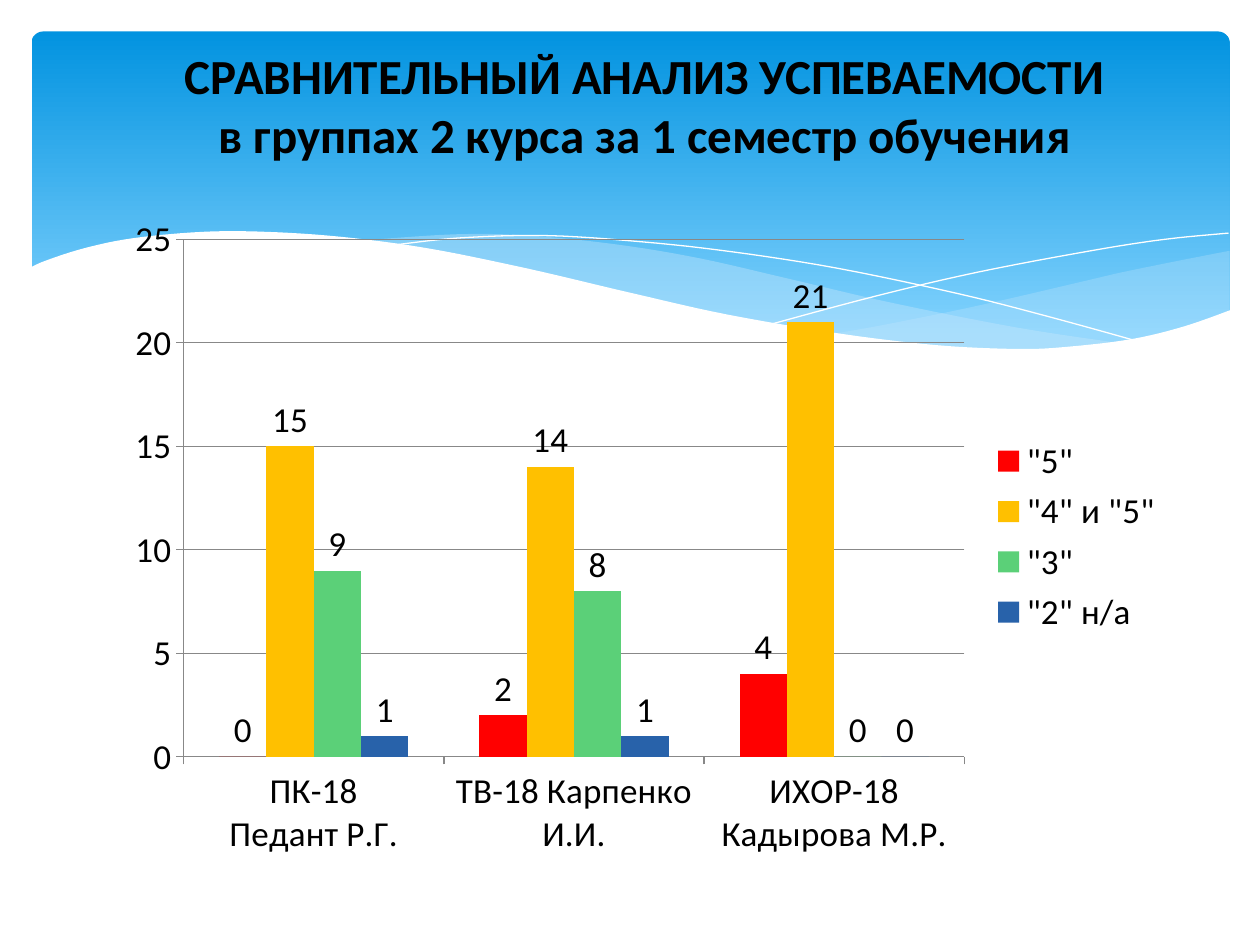
import pptx
import pptx.util
import pptx.chart.data
import pptx.dml.color
import pptx.enum.chart
import pptx.enum.shapes
import pptx.enum.text
import pptx.oxml
import pptx.oxml.ns

# The slide is a grid of 100 columns by 75 rows; boxes are left, top, width, height.
UNIT = pptx.util.Inches(0.1)
HEAD = (2.5, 2.5, 95.1, 27)
TITLE = (5.1, 3.6, 92.1, 13.7)
CHART = (9.1, 16.2, 84.3, 52.8)
PLOT = {"x": 0.065, "y": 0.053, "w": 0.735, "h": 0.778}
FONT = "Calibri"

LINES = ["СРАВНИТЕЛЬНЫЙ АНАЛИЗ УСПЕВАЕМОСТИ",
         "в группах 2 курса за 1 семестр обучения"]
GROUPS = ["ПК-18\nПедант Р.Г.", "ТВ-18 Карпенко И.И.", "ИХОР-18 Кадырова М.Р."]
MARKS = [('"5"', (0, 2, 4), "FF0000"),
         ('"4" и "5"', (15, 14, 21), "FFC000"),
         ('"3"', (9, 8, 0), "5BD078"),
         ('"2" н/а', (1, 1, 0), "2862AA")]

# Knots of the waves, in columns and rows from the corner of the header.
RIGHT_TOP = [(95.1, 17.4), (91, 18.2), (86.6, 19.1), (83.6, 19.8),
             (75.4, 21.7), (68.1, 23.2), (63.6, 24)]
RIGHT_LOW = [(63.6, 24), (69.3, 24.7), (74.4, 25.2), (78.9, 25.3),
             (83.8, 25), (88.8, 24.2), (92.4, 23.2), (95.1, 22.2)]
MID_TOP = [(86.8, 24.8), (78.2, 23.5), (68.1, 21.5), (60.4, 19.7), (53, 18),
           (46.4, 16.9), (39.5, 16.2), (33.6, 16.1), (26.1, 16.6)]
MID_LOW = [(26.1, 16.6), (33.7, 17.8), (42.4, 19.7), (50.5, 21.5), (57.6, 23),
           (65.5, 24.3), (72.3, 25.1), (78.2, 25.3), (83.2, 25.2), (86.8, 24.8)]
FALL = [(28.4, 17), (33.8, 16.4), (40.8, 16.2), (48.5, 16.7), (55.7, 17.5),
        (64, 18.8), (73.5, 20.8), (80.6, 22.6), (88.2, 24.7)]
RISE = [(58.8, 23.2), (67, 21), (75.1, 19.1), (84.1, 17.4), (89.9, 16.5), (95, 16)]
EDGE = [(95.2, 22.1), (91.5, 23.4), (87.4, 24.4), (82.5, 25), (78.4, 25.2),
        (71.9, 24.9), (64.3, 24), (55.4, 22.5), (47.8, 20.8), (39.3, 18.8),
        (31.4, 17.2), (24.6, 16.3), (18.6, 15.9), (13.6, 15.9), (8.1, 16.4),
        (4.2, 17.2), (1.1, 18.2), (-0.2, 18.8)]
BASE = [(-0.2, 30.4), (95.2, 30.4)]


def tint(code):
    return pptx.dml.color.RGBColor.from_string(code)


def emu(box):
    return [round(side * UNIT) for side in box]


def smooth(knots, steps=6):
    """Return points of a Catmull-Rom curve through the knots."""
    ends = [knots[0], *knots, knots[-1]]
    dots = [knots[0]]
    for a, b, c, d in zip(ends, ends[1:], ends[2:], ends[3:]):
        for step in range(1, steps + 1):
            t = step / steps
            dots.append(tuple(
                (2 * q + (r - p) * t + (2 * p - 5 * q + 4 * r - s) * t ** 2
                 + (3 * q - p - 3 * r + s) * t ** 3) / 2
                for p, q, r, s in zip(a, b, c, d)))
    return dots


def wave(slide, box, dots, fill=None, alpha=100):
    """Draw a filled area, or a thin white line when there is no fill."""
    dots = [emu((box[0] + x, box[1] + y)) for x, y in dots]
    pen = slide.shapes.build_freeform(*dots[0], scale=1.0)
    pen.add_line_segments(dots[1:], close=fill is not None)
    shape = pen.convert_to_shape()
    shape.shadow.inherit = False
    if fill is None:
        shape.fill.background()
        shape.line.color.rgb = tint("FFFFFF")
        shape.line.width = pptx.util.Pt(0)
        return
    shape.line.fill.background()
    shape.fill.solid()
    shape.fill.fore_color.rgb = tint(fill)
    if alpha < 100:
        clr = shape.fill._xPr.find(".//" + pptx.oxml.ns.qn("a:srgbClr"))
        node = pptx.oxml.parse_xml(
            f'<a:alpha {pptx.oxml.ns.nsdecls("a")} val="{alpha * 1000}"/>')
        clr.append(node)


def header(slide, box):
    panel = slide.shapes.add_shape(
        pptx.enum.shapes.MSO_SHAPE.ROUNDED_RECTANGLE, *emu(box))
    panel.adjustments[0] = 0.034
    panel.shadow.inherit = False
    panel.line.fill.background()
    panel.fill.gradient()
    panel.fill.gradient_angle = 270
    for stop, (code, place) in zip(panel.fill.gradient_stops,
                                   [("0293E0", 0), ("83D3FE", 0.9)]):
        stop.color.rgb = tint(code)
        stop.position = place
    wave(slide, box, smooth(RIGHT_TOP) + smooth(RIGHT_LOW), "C6E7FC", 29)
    wave(slide, box, smooth(MID_TOP) + smooth(MID_LOW), "C6E7FC", 40)
    wave(slide, box, smooth(FALL))
    wave(slide, box, smooth(RISE))
    wave(slide, box, smooth(EDGE) + BASE, "FFFFFF")


def heading(slide, box):
    title = slide.shapes.title
    title.left, title.top, title.width, title.height = emu(box)
    frame = title.text_frame
    frame.word_wrap = True
    frame.auto_size = pptx.enum.text.MSO_AUTO_SIZE.NONE
    frame.vertical_anchor = pptx.enum.text.MSO_ANCHOR.TOP
    frame.margin_top = 0
    para = frame.paragraphs[0]
    para.alignment = pptx.enum.text.PP_ALIGN.CENTER
    para.line_spacing = 1.0
    for row, line in enumerate(LINES):
        if row:
            para.add_line_break()
        run = para.add_run()
        run.text = line
        run.font.name = FONT
        run.font.size = pptx.util.Pt(28)
        run.font.bold = True
        run.font.color.rgb = tint("000000")
    slide.shapes._spTree.append(title._element)  # bring in front of the header


def place(chart):
    """Fix the inner plot area at the shares of the chart in PLOT."""
    area = chart._chartSpace.chart.plotArea
    for old in area.findall(pptx.oxml.ns.qn("c:layout")):
        area.remove(old)
    parts = "".join(f'<c:{key}Mode val="edge"/>' for key in "xy")
    parts += "".join(f'<c:{key} val="{val}"/>' for key, val in PLOT.items())
    area.insert(0, pptx.oxml.parse_xml(
        f'<c:layout {pptx.oxml.ns.nsdecls("c")}><c:manualLayout>'
        f'<c:layoutTarget val="inner"/>{parts}</c:manualLayout></c:layout>'))


def results(slide, box):
    kinds = pptx.enum.chart
    data = pptx.chart.data.CategoryChartData(number_format="0")
    data.categories = GROUPS
    for name, vals, _ in MARKS:
        data.add_series(name, vals)
    chart = slide.shapes.add_chart(
        kinds.XL_CHART_TYPE.COLUMN_CLUSTERED, *emu(box), data).chart
    chart.has_title = False
    chart.font.name = FONT
    chart.font.size = pptx.util.Pt(20)
    chart.font.color.rgb = tint("000000")
    chart.has_legend = True
    chart.legend.position = kinds.XL_LEGEND_POSITION.RIGHT
    chart.legend.include_in_layout = False

    axis = chart.value_axis
    axis.minimum_scale, axis.maximum_scale, axis.major_unit = 0, 25, 5
    axis.has_major_gridlines = True
    for line in (axis.format.line, axis.major_gridlines.format.line,
                 chart.category_axis.format.line):
        line.color.rgb = tint("888888")
        line.width = pptx.util.Pt(0.75)

    plot = chart.plots[0]
    plot.vary_by_categories = False
    plot.gap_width, plot.overlap = 150, 0
    for series, (_, _, code) in zip(plot.series, MARKS):
        series.format.fill.solid()
        series.format.fill.fore_color.rgb = tint(code)
        labels = series.data_labels
        labels.show_value = True
        labels.number_format = "0"
        labels.number_format_is_linked = False
        labels.position = kinds.XL_LABEL_POSITION.OUTSIDE_END
    place(chart)


def main():
    deck = pptx.Presentation()
    deck.slide_width, deck.slide_height = 100 * UNIT, 75 * UNIT
    slide = deck.slides.add_slide(deck.slide_layouts[5])
    header(slide, HEAD)
    heading(slide, TITLE)
    results(slide, CHART)
    deck.save("out.pptx")


if __name__ == "__main__":
    main()
